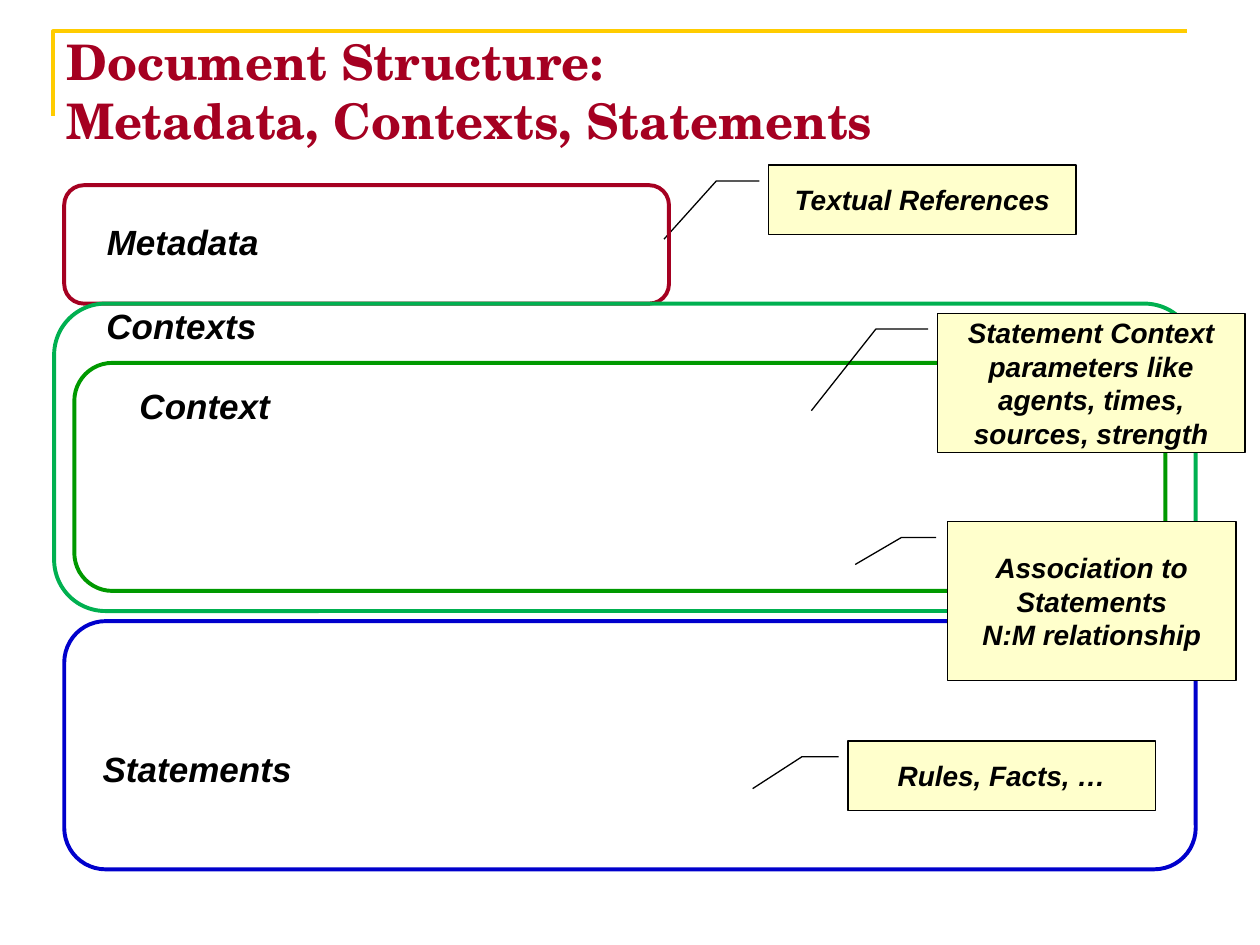
import pptx
import pptx.util
import pptx.dml.color
import pptx.enum.shapes
import pptx.enum.text

Inches = pptx.util.Inches
Pt = pptx.util.Pt
SHAPE = pptx.enum.shapes.MSO_SHAPE
ALIGN = pptx.enum.text.PP_ALIGN
ANCHOR = pptx.enum.text.MSO_ANCHOR
AUTO_SIZE = pptx.enum.text.MSO_AUTO_SIZE

COLORS = {
    "gold": "FFCC00",
    "crimson": "A50021",
    "emerald": "00B050",
    "green": "009900",
    "blue": "0000CC",
    "cream": "FFFFCC",
    "black": "000000",
}


class SlideBuilder:
    """Draws styled elements on the current slide."""

    title_font = "TeX Gyre Schola"
    body_font = "Arial"

    def __init__(self, slide):
        self.slide = slide

    def color(self, name):
        return pptx.dml.color.RGBColor.from_string(COLORS[name])

    def outline(self, s, color, width, fill=None):
        s.shadow.inherit = False
        if fill:
            s.fill.solid()
            s.fill.fore_color.rgb = self.color(fill)
        else:
            s.fill.background()
        s.line.color.rgb = self.color(color)
        s.line.width = Pt(width)

    def run(self, p, text, size, font, color="black", italic=True):
        r = p.add_run()
        r.text = text
        r.font.size = Pt(size)
        r.font.name = font
        r.font.bold = True
        r.font.italic = italic
        r.font.color.rgb = self.color(color)

    def corner(self, left, top, right, bottom):
        x, y = Inches(left), Inches(top)
        builder = self.slide.shapes.build_freeform(x, Inches(bottom))
        builder.add_line_segments([(x, y), (Inches(right), y)], close=False)
        self.outline(builder.convert_to_shape(), "gold", 2.25)

    def title(self, box, lines):
        tf = self.slide.shapes.add_textbox(*map(Inches, box)).text_frame
        tf.word_wrap = True
        tf.vertical_anchor = ANCHOR.MIDDLE
        p = tf.paragraphs[0]
        for i, line in enumerate(lines):
            if i:
                p.add_line_break()
            self.run(p, line, 28, self.title_font, "crimson", italic=False)

    def section(self, box, color):
        s = self.slide.shapes.add_shape(SHAPE.ROUNDED_RECTANGLE, *map(Inches, box))
        self.outline(s, color, 2.25)

    def callout(self, box, leader, lines):
        s = self.slide.shapes.add_shape(SHAPE.LINE_CALLOUT_2, *map(Inches, box))
        self.outline(s, "black", 0.75, "cream")
        start_y, start_x, bend_x, end_y, end_x = leader
        for i, value in enumerate((start_y, start_x, start_y, bend_x, end_y, end_x)):
            s.adjustments[i] = value
        tf = s.text_frame
        tf.word_wrap = True
        tf.vertical_anchor = ANCHOR.MIDDLE
        for i, line in enumerate(lines):
            p = tf.add_paragraph() if i else tf.paragraphs[0]
            p.alignment = ALIGN.CENTER
            self.run(p, line, 16, self.body_font)

    def label(self, box, text):
        tf = self.slide.shapes.add_textbox(*map(Inches, box)).text_frame
        tf.word_wrap = False
        tf.auto_size = AUTO_SIZE.SHAPE_TO_FIT_TEXT
        p = tf.paragraphs[0]
        p.alignment = ALIGN.CENTER
        self.run(p, text, 20, self.body_font)


def main():
    prs = pptx.Presentation()
    prs.slide_width, prs.slide_height = Inches(10), Inches(7.5)
    b = SlideBuilder(prs.slides.add_slide(prs.slide_layouts[6]))

    b.corner(0.42, 0.25, 9.42, 0.92)
    b.title((0.43, 0, 9, 1.44), ["Document Structure:", "Metadata, Contexts, Statements"])

    b.callout((6.1, 1.31, 2.44, 0.55), (0.23, -0.03, -0.17, 1.07, -0.34),
              ["Textual References"])

    for box, color in [
        ((0.51, 1.47, 4.8, 0.94), "crimson"),
        ((0.43, 2.41, 9.06, 2.44), "emerald"),
        ((0.59, 2.88, 8.66, 1.81), "green"),
        ((0.51, 4.93, 8.98, 1.97), "blue"),
    ]:
        b.section(box, color)

    for box, leader, lines in [
        ((7.44, 2.49, 2.44, 1.1), (0.11, -0.03, -0.2, 0.7, -0.41),
         ["Statement Context parameters like agents, times, sources, strength"]),
        ((7.52, 4.14, 2.29, 1.26), (0.1, -0.04, -0.16, 0.27, -0.32),
         ["Association to Statements", "N:M relationship"]),
        ((6.73, 5.88, 2.44, 0.55), (0.23, -0.03, -0.15, 0.69, -0.31),
         ["Rules, Facts, …"]),
    ]:
        b.callout(box, leader, lines)

    for box, text in [
        ((0.74, 1.7, 1.42, 0.44), "Metadata"),
        ((0.74, 2.37, 1.4, 0.44), "Contexts"),
        ((0.71, 5.88, 1.71, 0.44), "Statements"),
        ((1, 3, 1.25, 0.44), "Context"),
    ]:
        b.label(box, text)

    prs.save("out.pptx")


if __name__ == "__main__":
    main()
